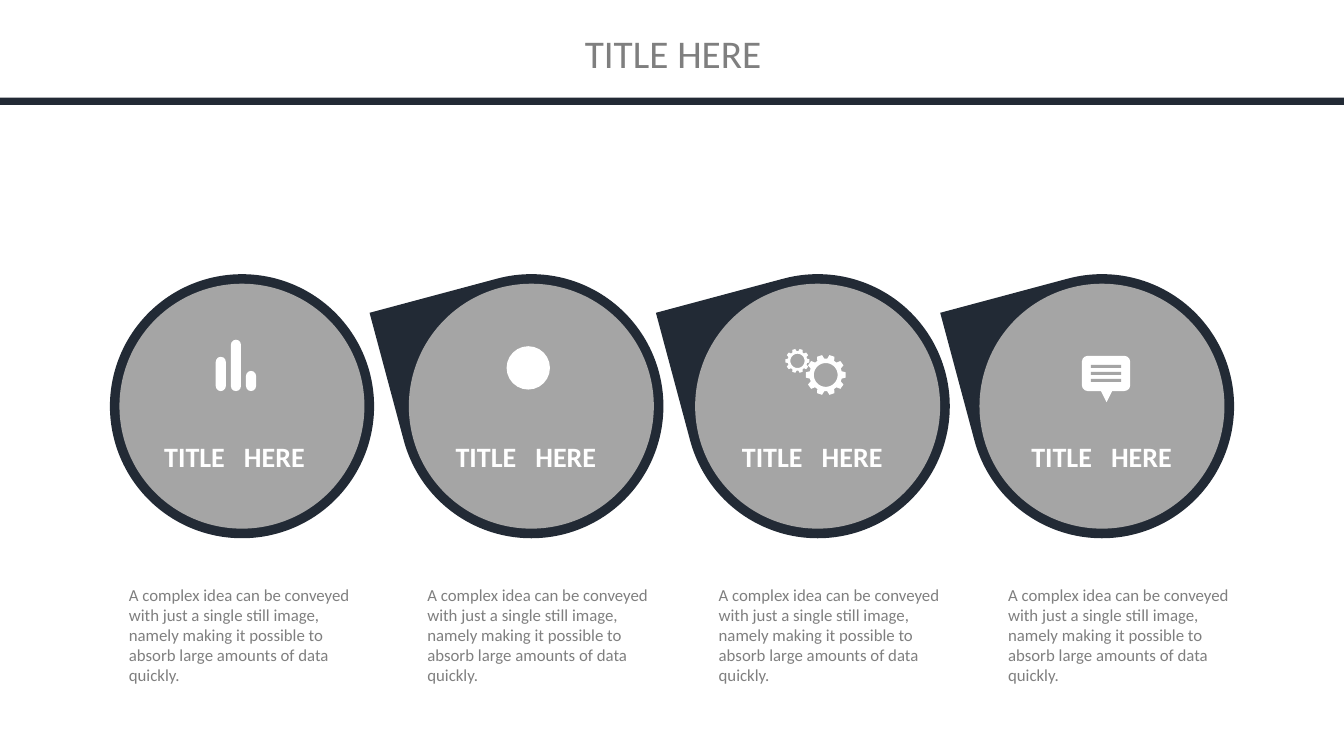
from dataclasses import dataclass
from math import cos, radians, sin

from pptx import Presentation
from pptx.dml.color import RGBColor
from pptx.enum.shapes import MSO_SHAPE
from pptx.enum.text import MSO_AUTO_SIZE, PP_ALIGN
from pptx.util import Inches, Pt

HEADING = "TITLE HERE"
CAPTION = (
    "A complex idea can be conveyed with just a single still image, "
    "namely making it possible to absorb large amounts of data quickly."
)
STEPS = [
    {"center": 2.40, "label": ("TITLE", "HERE"), "label_left": 1.53, "caption_left": 1.18, "icon": "bars"},
    {"center": 5.27, "label": ("TITLE", "HERE"), "label_left": 4.42, "caption_left": 4.14, "icon": "dot"},
    {"center": 8.11, "label": ("TITLE", "HERE"), "label_left": 7.26, "caption_left": 7.03, "icon": "gears"},
    {"center": 10.93, "label": ("TITLE", "HERE"), "label_left": 10.13, "caption_left": 9.90, "icon": "speech"},
]
BAR_HEIGHTS = [0.34, 0.51, 0.20]
GEARS = [(0.08, 3.72, 0.20), (-0.20, 3.58, 0.12)]
SPEECH_LINES = 3

CENTER_Y = 4.03
RING_SIZE = 2.62
DISC_SIZE = 2.43
TEETH = 10


@dataclass(frozen=True)
class Theme:
    font: str = "Calibri"
    navy: RGBColor = RGBColor(0x22, 0x2A, 0x35)
    disc: RGBColor = RGBColor(0xA5, 0xA5, 0xA5)
    gray: RGBColor = RGBColor(0x7F, 0x7F, 0x7F)
    white: RGBColor = RGBColor(0xFF, 0xFF, 0xFF)
    heading: int = 28
    label: int = 20
    caption: int = 12
    word_gap: int = 9


THEME = Theme()


def paint(shape, color):
    shape.shadow.inherit = False
    shape.fill.solid()
    shape.fill.fore_color.rgb = color
    shape.line.fill.background()
    return shape


def add_block(slide, kind, left, top, width, height, color):
    block = slide.shapes.add_shape(kind, Inches(left), Inches(top), Inches(width), Inches(height))
    return paint(block, color)


def add_centered(slide, kind, x, y, size, color):
    return add_block(slide, kind, x - size / 2, y - size / 2, size, size, color)


def add_rounded(slide, left, top, width, height, color, rounding):
    block = add_block(slide, MSO_SHAPE.ROUNDED_RECTANGLE, left, top, width, height, color)
    block.adjustments[0] = rounding


def add_words(slide, left, top, width, height, words, size, color, bold=False, wrap=True, inset=True):
    box = slide.shapes.add_textbox(Inches(left), Inches(top), Inches(width), Inches(height))
    frame = box.text_frame
    frame.word_wrap = wrap
    frame.auto_size = MSO_AUTO_SIZE.SHAPE_TO_FIT_TEXT
    if not inset:
        frame.margin_left = frame.margin_right = frame.margin_top = frame.margin_bottom = 0
    paragraph = frame.paragraphs[0]
    for word in words:
        run = paragraph.add_run()
        run.text = word
        run.font.name = THEME.font
        run.font.size = Pt(size)
        run.font.bold = bold
        run.font.color.rgb = color
        if word == " ":
            run.font._element.set("spc", str(THEME.word_gap * 100))
    return paragraph


def polar(x, y, radius, degrees):
    angle = radians(degrees)
    return Inches(x + radius * cos(angle)), Inches(y + radius * sin(angle))


def add_gear(slide, x, y, radius):
    profile = [(-13, 0.81), (-7.5, 1), (7.5, 1), (13, 0.81)]
    rim = [
        polar(x, y, radius * reach, tooth * 360 / TEETH + offset)
        for tooth in range(TEETH)
        for offset, reach in profile
    ]
    hole = [polar(x, y, radius * 0.59, -degrees) for degrees in range(0, 360, 10)]
    outline = slide.shapes.build_freeform(*rim[0])
    outline.add_line_segments(rim[1:], close=True)
    outline.move_to(*hole[0])
    outline.add_line_segments(hole[1:], close=True)
    paint(outline.convert_to_shape(), THEME.white)


def draw_bars(slide, x):
    for index, height in enumerate(BAR_HEIGHTS):
        add_rounded(slide, x - 0.26 + index * 0.15, 3.88 - height, 0.1, height, THEME.white, 0.5)


def draw_dot(slide, x):
    add_centered(slide, MSO_SHAPE.OVAL, x - 0.03, 3.65, 0.43, THEME.white)


def draw_gears(slide, x):
    for offset, y, radius in GEARS:
        add_gear(slide, x + offset, y, radius)


def draw_speech(slide, x):
    tail = add_block(slide, MSO_SHAPE.ISOSCELES_TRIANGLE, x - 0.02, 3.86, 0.13, 0.13, THEME.white)
    tail.rotation = 180
    add_rounded(slide, x - 0.2, 3.53, 0.48, 0.35, THEME.white, 0.17)
    for index in range(SPEECH_LINES):
        add_block(slide, MSO_SHAPE.RECTANGLE, x - 0.11, 3.62 + index * 0.07, 0.3, 0.03, THEME.disc)


ICONS = {"bars": draw_bars, "dot": draw_dot, "gears": draw_gears, "speech": draw_speech}


def draw_step(slide, step, first):
    x = step["center"]
    ring = add_centered(slide, MSO_SHAPE.OVAL if first else MSO_SHAPE.TEAR, x, CENTER_Y, RING_SIZE, THEME.navy)
    if not first:
        ring.rotation = 255
    add_centered(slide, MSO_SHAPE.OVAL, x, CENTER_Y, DISC_SIZE, THEME.disc)
    ICONS[step["icon"]](slide, x)
    before, after = step["label"]
    add_words(slide, step["label_left"], 4.31, 1.61, 0.44, [before, " ", after],
              THEME.label, THEME.white, bold=True, wrap=False)
    add_words(slide, step["caption_left"], 5.75, 2.5, 1.11, [CAPTION], THEME.caption, THEME.gray)


def main():
    deck = Presentation()
    deck.slide_width = Inches(13.33)
    deck.slide_height = Inches(7.5)
    slide = deck.slides.add_slide(deck.slide_layouts[6])
    add_block(slide, MSO_SHAPE.RECTANGLE, 0, 0.97, 13.33, 0.07, THEME.navy)
    heading = add_words(slide, 4.85, 0.29, 3.65, 0.47, [HEADING], THEME.heading, THEME.gray, inset=False)
    heading.alignment = PP_ALIGN.CENTER
    for index, step in enumerate(STEPS):
        draw_step(slide, step, first=index == 0)
    deck.save("out.pptx")


if __name__ == "__main__":
    main()
